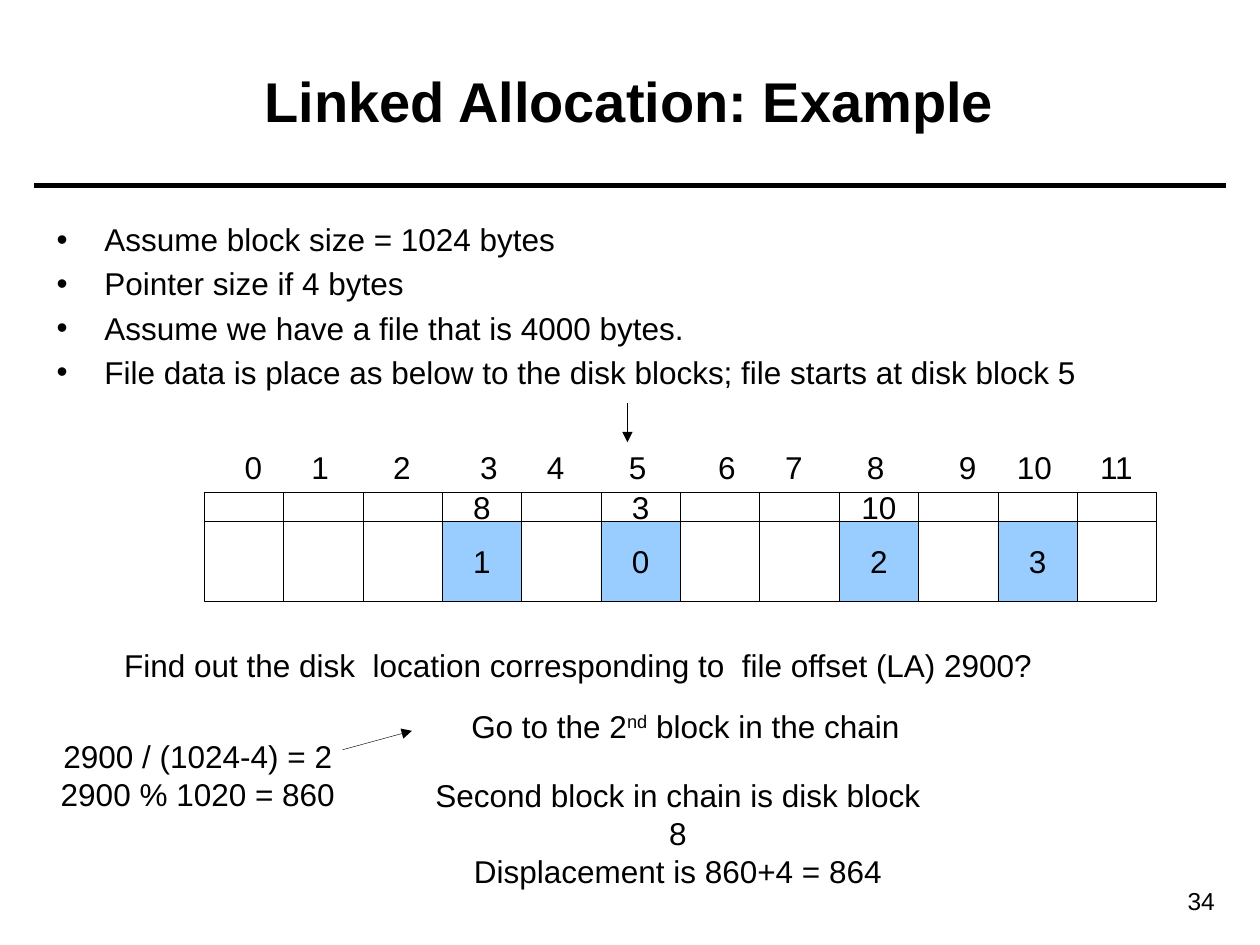
from lxml.etree import SubElement
from pptx import Presentation
from pptx.dml.color import RGBColor
from pptx.enum.shapes import MSO_CONNECTOR, MSO_SHAPE
from pptx.enum.text import MSO_ANCHOR, PP_ALIGN
from pptx.oxml.ns import qn
from pptx.util import Inches, Pt


class Theme:
    font = "Arial"
    black = RGBColor(0x00, 0x00, 0x00)
    used_block = RGBColor(0x99, 0xCC, 0xFF)
    title_size, body_size, number_size = 32, 18, 14
    rule_width, thin_width = 3, 0.25


TITLE = "Linked Allocation: Example"
SLIDE_NUMBER = "34"
ASSUMPTIONS = [
    "Assume block size = 1024 bytes",
    "Pointer size if 4 bytes",
    "Assume we have a file that is 4000 bytes.",
    "File data is place as below to the disk blocks; file starts at disk block 5",
]
# Centre of each disk block's number, in order from block 0
NUMBER_CENTERS = [2.01, 2.54, 3.19, 3.88, 4.41, 5.06,
                  5.77, 6.3, 6.95, 7.68, 8.21, 8.86]
NEXT_BLOCK = {3: "8", 5: "3", 8: "10"}
FILE_BLOCK = {5: "0", 3: "1", 8: "2", 10: "3"}
# Lines, (left, top, width, height), whether the text wraps
NOTES = [
    (["Find out the disk  location corresponding to  file offset (LA) 2900?"],
     (0.74, 5.08, 7.7, 0.4), False),
    (["2900 / (1024-4) = 2", "2900 % 1020 = 860"], (0.27, 5.8, 2.6, 0.7), False),
    (["Second block in chain is disk block 8", "Displacement is 860+4 = 864"],
     (3.33, 6.11, 4.1, 0.99), True),
]
CHAIN_NOTE = ["Go to the 2", "nd", " block in the chain"]
CHAIN_NOTE_BOX = (3.49, 5.56, 3.9, 0.4)
ARROWS = [((2.72, 5.95), (3.27, 5.8)), ((4.98, 3.2), (4.98, 3.51))]

GRID_LEFT, GRID_TOP, CELL = 1.62, 3.91, 0.63
POINTER_HEIGHT = 0.23
NUMBER_TOP, NUMBER_HEIGHT = 3.51, 0.4


def inches(values):
    return [Inches(value) for value in values]


def style_run(run, size, bold=False):
    run.font.name = Theme.font
    run.font.size = Pt(size)
    run.font.bold = bold
    run.font.color.rgb = Theme.black


def write(shape, lines, size=Theme.body_size, align=PP_ALIGN.CENTER,
          anchor=MSO_ANCHOR.TOP, wrap=False, bold=False):
    frame = shape.text_frame
    frame.text = "\n".join(lines)
    frame.word_wrap = wrap
    frame.vertical_anchor = anchor
    for paragraph in frame.paragraphs:
        paragraph.alignment = align
        for run in paragraph.runs:
            style_run(run, size, bold)


def add_text(slide, lines, box, **style):
    shape = slide.shapes.add_textbox(*inches(box))
    write(shape, lines, **style)
    return shape


def add_cell(slide, box, label=None, fill=None):
    shape = slide.shapes.add_shape(MSO_SHAPE.RECTANGLE, *inches(box))
    shape.shadow.inherit = False
    if fill is None:
        shape.fill.background()
    else:
        shape.fill.solid()
        shape.fill.fore_color.rgb = fill
    shape.line.color.rgb = Theme.black
    shape.line.width = Pt(Theme.thin_width)
    if label:
        write(shape, [label], anchor=MSO_ANCHOR.MIDDLE)


def add_line(slide, start, end, width, arrow=False):
    connector = slide.shapes.add_connector(MSO_CONNECTOR.STRAIGHT, *inches(start + end))
    connector.line.color.rgb = Theme.black
    connector.line.width = Pt(width)
    if arrow:
        SubElement(connector.get_or_add_ln(), qn("a:tailEnd"), type="triangle")
    SubElement(connector._element.spPr, qn("a:effectLst"))


def add_bullets(slide, lines, box):
    shape = add_text(slide, lines, box, align=PP_ALIGN.LEFT, wrap=True)
    indent = Inches(0.38)
    for paragraph in shape.text_frame.paragraphs:
        paragraph.space_before = Pt(3.6)
        properties = paragraph._p.get_or_add_pPr()
        properties.set("marL", str(indent))
        properties.set("indent", str(-indent))
        SubElement(properties, qn("a:buFont"), typeface=Theme.font)
        SubElement(properties, qn("a:buChar"), char="•")


def add_disk(slide):
    """Draw every block with its pointer strip, then the blocks the file uses."""
    lefts = [GRID_LEFT + CELL * block for block in range(len(NUMBER_CENTERS))]
    data_top = GRID_TOP + POINTER_HEIGHT
    for left in lefts:
        add_cell(slide, (left, GRID_TOP, CELL, POINTER_HEIGHT + CELL))
    for block, left in enumerate(lefts):
        add_cell(slide, (left, GRID_TOP, CELL, POINTER_HEIGHT), NEXT_BLOCK.get(block))
    for block, label in FILE_BLOCK.items():
        add_cell(slide, (lefts[block], data_top, CELL, CELL), label, Theme.used_block)
    for block, center in enumerate(NUMBER_CENTERS):
        width = 0.34 if block < 10 else 0.48
        add_text(slide, [str(block)],
                 (center - width / 2, NUMBER_TOP, width, NUMBER_HEIGHT))


def add_chain_note(slide):
    shape = add_text(slide, [], CHAIN_NOTE_BOX)
    paragraph = shape.text_frame.paragraphs[0]
    for text in CHAIN_NOTE:
        run = paragraph.add_run()
        run.text = text
        style_run(run, Theme.body_size)
    paragraph.runs[1]._r.get_or_add_rPr().set("baseline", "30000")


def main():
    presentation = Presentation()
    presentation.slide_width, presentation.slide_height = Inches(10), Inches(7.5)
    slide = presentation.slides.add_slide(presentation.slide_layouts[6])

    add_line(slide, (0.27, 1.47), (9.73, 1.47), Theme.rule_width)
    add_text(slide, [SLIDE_NUMBER], (8.7, 6.98, 1.04, 0.34),
             size=Theme.number_size, align=PP_ALIGN.RIGHT, wrap=True)
    add_text(slide, [TITLE], (0.35, 0.17, 9.29, 1.25), size=Theme.title_size,
             anchor=MSO_ANCHOR.MIDDLE, wrap=True, bold=True)
    add_bullets(slide, ASSUMPTIONS, (0.35, 1.7, 9.29, 2.44))
    add_disk(slide)
    for lines, box, wrap in NOTES:
        add_text(slide, lines, box, wrap=wrap)
    add_chain_note(slide)
    for start, end in ARROWS:
        add_line(slide, start, end, Theme.thin_width, arrow=True)

    presentation.save("out.pptx")


if __name__ == "__main__":
    main()
